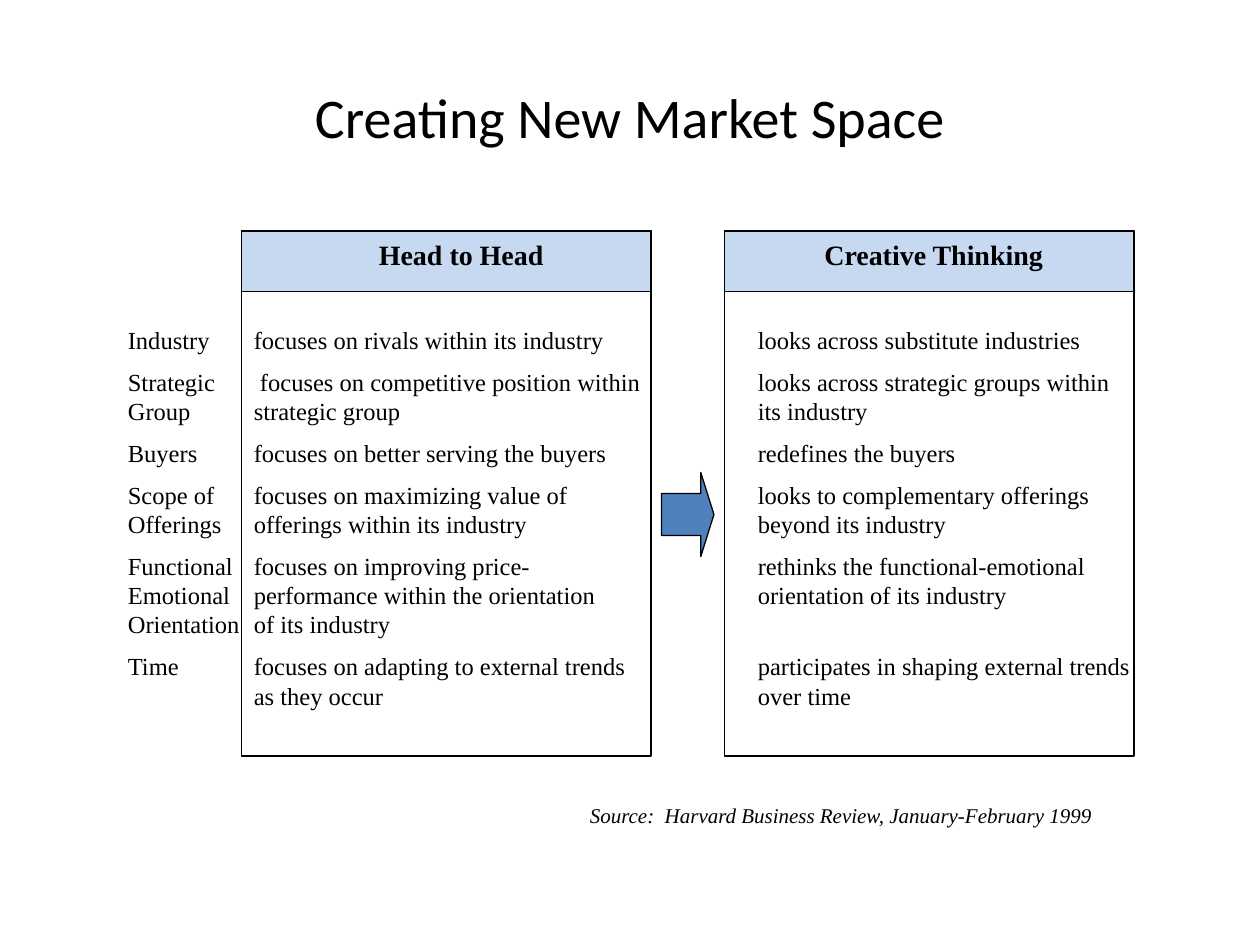
from lxml.etree import SubElement
from pptx import Presentation
from pptx.dml.color import RGBColor
from pptx.enum.shapes import MSO_SHAPE as SHAPE
from pptx.enum.text import MSO_ANCHOR, PP_ALIGN
from pptx.oxml.ns import qn
from pptx.util import Pt

COLORS = {"ink": "000000", "band": "C6D9F1", "arrow": "4F81BD"}
SERIF = "Times New Roman"
TITLE = "Creating New Market Space"
HEADINGS = ("Head to Head", "Creative Thinking")
ROWS = [
    [("Industry", "focuses on rivals within its industry", "looks across substitute industries")],
    [("Strategic", " focuses on competitive position within", "looks across strategic groups within"),
     ("Group", "strategic group", "its industry")],
    [("Buyers", "focuses on better serving the buyers", "redefines the buyers")],
    [("Scope of", "focuses on maximizing value of", "looks to complementary offerings"),
     ("Offerings", "offerings within its industry", "beyond its industry")],
    [("Functional", "focuses on improving price-", "rethinks the functional-emotional"),
     ("Emotional", "performance within the orientation", "orientation of its industry"),
     ("Orientation", "of its industry")],
    [("Time", "focuses on adapting to external trends", "participates in shaping external trends"),
     ("", "as they occur", "over time")],
]
SOURCE = "Source:  Harvard Business Review, January-February 1999"
PANEL_LEFTS = (138, 414)
PANEL_TOP, PANEL_W, PANEL_H, BAND_H = 132, 234, 300, 34.5
HEADING_TABS = [(190.5, "ctr"), (460.5, "ctr")]
ROW_TABS = [(72, "l"), (360, "l")]


def rgb(name):
    return RGBColor.from_string(COLORS[name])


def add_box(slide, kind, left, top, width, height, fill=None):
    s = slide.shapes.add_shape(kind, Pt(left), Pt(top), Pt(width), Pt(height))
    s.shadow.inherit = False
    if fill:
        s.fill.solid()
        s.fill.fore_color.rgb = rgb(fill)
    else:
        s.fill.background()
    s.line.color.rgb = rgb("ink")
    s.line.width = Pt(0.75)
    return s


def add_text(slide, left, top, width, height):
    tf = slide.shapes.add_textbox(Pt(left), Pt(top), Pt(width), Pt(height)).text_frame
    tf.word_wrap = True
    return tf


def format_runs(p, size, font=SERIF, bold=False, italic=False):
    for r in p.runs:
        r.font.name, r.font.size = font, Pt(size)
        r.font.bold, r.font.italic = bold, italic
        r.font.color.rgb = rgb("ink")


def add_tabs(p, stops):
    tabs = SubElement(p._p.get_or_add_pPr(), qn("a:tabLst"))
    for pos, align in stops:
        SubElement(tabs, qn("a:tab"), pos=str(int(Pt(pos))), algn=align)


def main():
    prs = Presentation()
    prs.slide_width, prs.slide_height = Pt(720), Pt(540)
    slide = prs.slides.add_slide(prs.slide_layouts[5])

    title = slide.shapes.title
    title.left, title.top, title.width, title.height = Pt(36), Pt(21.6), Pt(648), Pt(90)
    tf = title.text_frame
    tf.text = TITLE
    tf.vertical_anchor = MSO_ANCHOR.MIDDLE
    tf.paragraphs[0].alignment = PP_ALIGN.CENTER
    format_runs(tf.paragraphs[0], 32, "Calibri")

    for left in PANEL_LEFTS:
        add_box(slide, SHAPE.RECTANGLE, left, PANEL_TOP, PANEL_W, PANEL_H)
        add_box(slide, SHAPE.RECTANGLE, left, PANEL_TOP, PANEL_W, BAND_H, "band")

    tf = add_text(slide, 66, PANEL_TOP, 612, 289.5)
    p = tf.paragraphs[0]
    add_tabs(p, HEADING_TABS)
    p.text = "\t" + "\t".join(HEADINGS)
    format_runs(p, 16, bold=True)
    for i, row in enumerate(ROWS):
        p = tf.add_paragraph()
        add_tabs(p, ROW_TABS)
        p.text = "\v".join("\t".join(line) for line in row)
        p.line_spacing = Pt(16.8)
        p.space_before = Pt(7 if i else 31)
        format_runs(p, 14)

    arrow = add_box(slide, SHAPE.RIGHT_ARROW, 378, 270, 30, 48, "arrow")
    arrow.adjustments[0], arrow.adjustments[1] = 0.5, 0.25

    tf = add_text(slide, 330, 455, 318, 21.6)
    tf.text = SOURCE
    format_runs(tf.paragraphs[0], 12, italic=True)

    prs.save("out.pptx")


if __name__ == "__main__":
    main()
